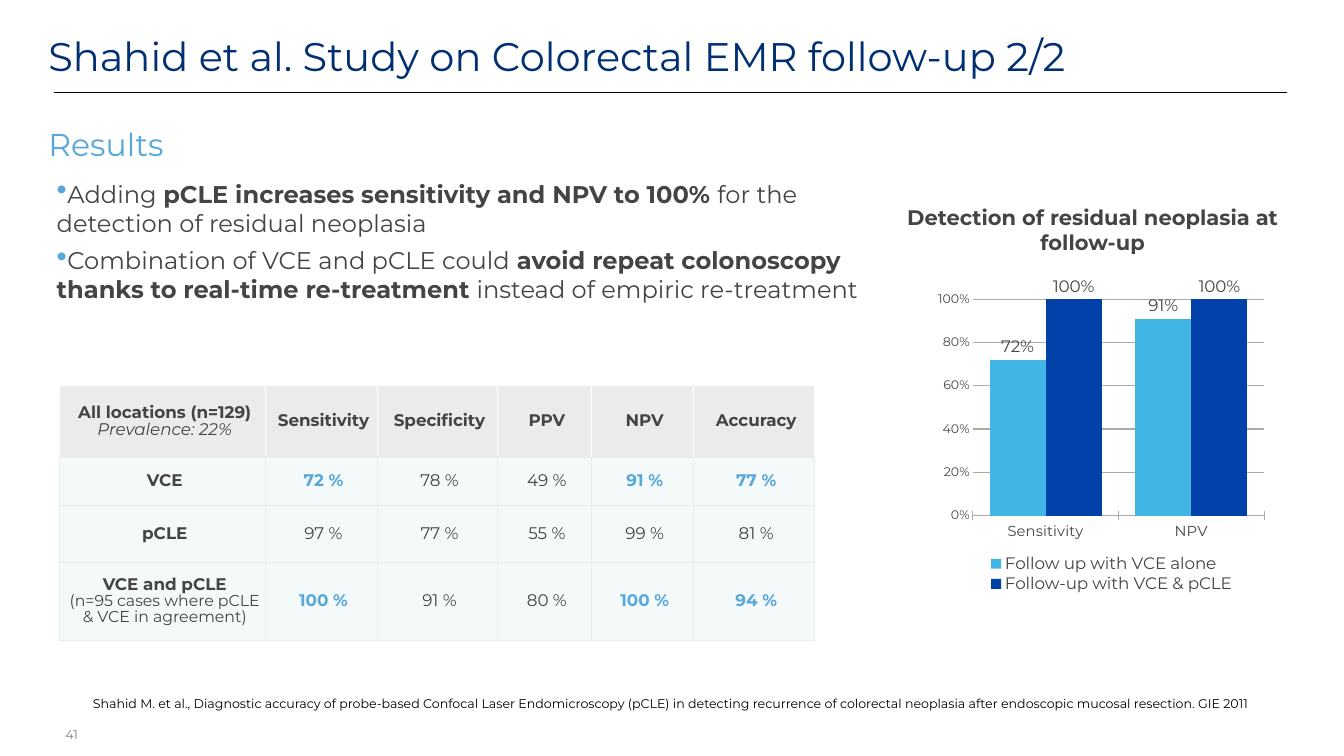
from dataclasses import dataclass
from typing import NamedTuple

from lxml import etree
from pptx import Presentation
from pptx import util as u
from pptx.chart import data as chart_data
from pptx.dml.color import RGBColor
from pptx.enum import chart as charts, shapes, text
from pptx.oxml import parse_xml
from pptx.oxml.ns import nsdecls, qn

FONT = "Montserrat"
COLORS = {
    "navy": "002F73", "sky": "58A7DA", "body": "444444", "number": "818181",
    "black": "000000", "white": "FFFFFF", "header": "EBEBEB", "row": "F4FAFA",
    "grid": "AAAAAA", "vce": "41B6E4", "both": "0042AA",
}
CENTER = text.PP_ALIGN.CENTER


class Run(NamedTuple):
    words: str
    size: float
    color: str = "body"
    bold: bool = False
    italic: bool = False


@dataclass
class TextBlock:
    box: tuple[float, float, float, float]
    paragraphs: list[list[Run]]
    align: text.PP_ALIGN = text.PP_ALIGN.LEFT
    wrap: bool = True
    bullets: bool = False


def rgb(name: str) -> RGBColor:
    return RGBColor.from_string(COLORS[name])


def style_font(font, size: float, color: str, bold: bool = False, italic: bool = False) -> None:
    font.name, font.size = FONT, u.Pt(size)
    font.bold, font.italic = bold, italic
    font.color.rgb = rgb(color)


def add_runs(paragraph, runs: list[Run]) -> None:
    for item in runs:
        run = paragraph.add_run()
        run.text = item.words
        style_font(run.font, *item[1:])


def set_insets(frame, inset: float) -> None:
    frame.margin_left = frame.margin_right = u.Inches(inset)
    frame.margin_top = frame.margin_bottom = u.Inches(inset)


def add_bullet(paragraph) -> None:
    props = paragraph._p.get_or_add_pPr()
    props.set("marL", str(u.Inches(0.03)))
    props.set("indent", "0")
    color = etree.SubElement(props, qn("a:buClr"))
    etree.SubElement(color, qn("a:srgbClr"), val=COLORS["sky"])
    etree.SubElement(props, qn("a:buSzPct"), val="125000")
    etree.SubElement(props, qn("a:buChar"), char="•")


def add_text(slide, block: TextBlock) -> None:
    frame = slide.shapes.add_textbox(*map(u.Inches, block.box)).text_frame
    frame.word_wrap = block.wrap
    set_insets(frame, 0.04)
    for index, runs in enumerate(block.paragraphs):
        paragraph = frame.add_paragraph() if index else frame.paragraphs[0]
        paragraph.alignment = block.align
        if block.bullets:
            add_bullet(paragraph)
        if index:
            paragraph.space_before = u.Pt(8)
        add_runs(paragraph, runs)


def add_title(slide, words: str) -> None:
    title = slide.shapes.title
    title.left, title.top = u.Inches(0.64), u.Inches(0.24)
    title.width, title.height = u.Inches(16.28), u.Inches(0.99)
    frame = title.text_frame
    frame.auto_size = text.MSO_AUTO_SIZE.NONE
    frame.vertical_anchor = text.MSO_ANCHOR.MIDDLE
    set_insets(frame, 0)
    frame.paragraphs[0].alignment = text.PP_ALIGN.LEFT
    add_runs(frame.paragraphs[0], [Run(words, 38, "navy")])


def add_rule(slide) -> None:
    rule = slide.shapes.add_connector(
        shapes.MSO_CONNECTOR.STRAIGHT, *map(u.Inches, (0.71, 1.22, 17.03, 1.22)))
    rule.line.color.rgb = rgb("black")
    rule.line.width = u.Pt(0.25)
    etree.SubElement(rule._element.spPr, qn("a:effectLst"))


# Results table
def set_borders(cell, is_header: bool) -> None:
    props = cell._tc.get_or_add_tcPr()
    for index, side in enumerate("LRTB"):
        color = COLORS["white" if is_header and side != "B" else "header"]
        props.insert(index, parse_xml(
            f'<a:ln{side} {nsdecls("a")} w="12700"><a:solidFill>'
            f'<a:srgbClr val="{color}"/></a:solidFill></a:ln{side}>'))


def fill_cell(cell, lines: list[list[Run]], is_header: bool) -> None:
    cell.fill.solid()
    cell.fill.fore_color.rgb = rgb("header" if is_header else "row")
    set_borders(cell, is_header)
    cell.vertical_anchor = text.MSO_ANCHOR.MIDDLE
    set_insets(cell, 0.04)
    for index, runs in enumerate(lines):
        paragraph = cell.text_frame.add_paragraph() if index else cell.text_frame.paragraphs[0]
        paragraph.alignment = CENTER
        paragraph.line_spacing = 0.83
        paragraph._p.get_or_add_pPr().set("marL", str(u.Inches(0.06)))
        add_runs(paragraph, runs)


def add_results_table(slide) -> None:
    widths = (2.72, 1.48, 1.59, 1.25, 1.34, 1.61)
    heights = (0.95, 0.64, 0.75, 1.03)
    measures = ("Sensitivity", "Specificity", "PPV", "NPV", "Accuracy")
    improved = ("Sensitivity", "NPV", "Accuracy")
    results = [
        ([[Run("VCE", 16, bold=True)]], (72, 78, 49, 91, 77), True),
        ([[Run("pCLE", 16, bold=True)]], (97, 77, 55, 99, 81), False),
        ([[Run("VCE and pCLE", 16, bold=True)],
          [Run("(n=95 cases where pCLE & VCE in agreement)", 15)]],
         (100, 91, 80, 100, 94), True),
    ]
    table = slide.shapes.add_table(
        len(heights), len(widths), *map(u.Inches, (0.79, 5.1, 10, 3.36))).table
    table.first_row = table.horz_banding = False
    for column, width in zip(table.columns, widths):
        column.width = u.Inches(width)
    for row, height in zip(table.rows, heights):
        row.height = u.Inches(height)

    fill_cell(table.cell(0, 0), [[Run("All locations (n=129)", 16, bold=True)],
                                 [Run("Prevalence: 22%", 16, italic=True)]], True)
    for column, measure in enumerate(measures, 1):
        fill_cell(table.cell(0, column), [[Run(measure, 16, bold=True)]], True)
    for row, (method, values, highlighted) in enumerate(results, 1):
        fill_cell(table.cell(row, 0), method, False)
        for column, (measure, value) in enumerate(zip(measures, values), 1):
            strong = highlighted and measure in improved
            figure = Run(f"{value} %", 16, "sky" if strong else "body", strong)
            fill_cell(table.cell(row, column), [[figure]], False)


# Detection chart
def place(parent, index: int, x: float, y: float, w: float, h: float, inner: bool = False) -> None:
    for old in parent.findall(qn("c:layout")):
        parent.remove(old)
    target = '<c:layoutTarget val="inner"/>' if inner else ""
    sizes = "".join(f'<c:{key} val="{value}"/>' for key, value in zip("xywh", (x, y, w, h)))
    parent.insert(index, parse_xml(
        f'<c:layout {nsdecls("c")}><c:manualLayout>{target}<c:xMode val="edge"/>'
        f'<c:yMode val="edge"/>{sizes}</c:manualLayout></c:layout>'))


def add_detection_chart(slide) -> None:
    rates = chart_data.CategoryChartData()
    rates.categories = ["Sensitivity", "NPV"]
    rates.add_series("Follow up with VCE alone", (0.72, 0.91))
    rates.add_series("Follow-up with VCE & pCLE", (1, 1))
    chart = slide.shapes.add_chart(
        charts.XL_CHART_TYPE.COLUMN_CLUSTERED,
        *map(u.Inches, (12.18, 3.66, 4.59, 4.2)), rates).chart
    chart.has_title = False
    style_font(chart.font, 10, "black")

    plot = chart.plots[0]
    plot.gap_width, plot.overlap, plot.vary_by_categories = 60, 0, False
    for series, color in zip(plot.series, ("vce", "both")):
        series.format.fill.solid()
        series.format.fill.fore_color.rgb = rgb(color)
        labels = series.data_labels
        labels.show_value = True
        labels.position = charts.XL_LABEL_POSITION.OUTSIDE_END
        labels.number_format, labels.number_format_is_linked = "0%", False
        style_font(labels.font, 16, "body")

    methods, scale = chart.category_axis, chart.value_axis
    methods.major_tick_mark = charts.XL_TICK_MARK.CROSS
    methods.tick_label_position = charts.XL_TICK_LABEL_POSITION.LOW
    style_font(methods.tick_labels.font, 14, "body")
    scale.minimum_scale, scale.maximum_scale, scale.major_unit = 0, 1, 0.2
    scale.major_tick_mark = charts.XL_TICK_MARK.INSIDE
    scale.tick_labels.number_format = "0%"
    scale.tick_labels.number_format_is_linked = False
    style_font(scale.tick_labels.font, 12, "body")
    scale.format.line.fill.background()
    for line in (methods.format.line, scale.major_gridlines.format.line):
        line.color.rgb, line.width = rgb("grid"), u.Pt(1)

    chart.has_legend = True
    chart.legend.position = charts.XL_LEGEND_POSITION.BOTTOM
    chart.legend.include_in_layout = True
    style_font(chart.legend.font, 16, "body")
    place(chart.legend._element, 1, 0.16, 0.87, 0.78, 0.13)
    place(chart._chartSpace.chart.plotArea, 0, 0.15, 0.06, 0.84, 0.69, inner=True)


def main() -> None:
    deck = Presentation()
    deck.slide_width, deck.slide_height = u.Inches(17.78), u.Inches(10)
    slide = deck.slides.add_slide(deck.slide_layouts[5])
    add_title(slide, "Shahid et al. Study on Colorectal EMR follow-up 2/2")
    add_rule(slide)
    add_detection_chart(slide)
    add_results_table(slide)

    # Headings, findings, page number and citation
    findings = [
        [Run("Adding ", 23), Run("pCLE increases sensitivity and NPV to 100%", 23, bold=True),
         Run(" for the detection of residual neoplasia", 23)],
        [Run("Combination of VCE and pCLE could ", 23),
         Run("avoid repeat colonoscopy thanks to real-time re-treatment", 23, bold=True),
         Run(" instead of empiric re-treatment", 23)],
    ]
    citation = ("Shahid M. et al., Diagnostic accuracy of probe-based Confocal Laser Endomicroscopy "
                "(pCLE) in detecting recurrence of colorectal neoplasia after endoscopic mucosal "
                "resection. GIE 2011")
    chart_heading = Run("Detection of residual neoplasia at follow-up", 20, bold=True)
    for block in (
        TextBlock((0.6, 1.62, 1.61, 0.5), [[Run("Results", 30, "sky")]], wrap=False),
        TextBlock((0.68, 2.33, 11.19, 1.69), findings, bullets=True),
        TextBlock((11.74, 2.66, 5.43, 0.68), [[chart_heading]], CENTER),
        TextBlock((0.79, 9.57, 0.28, 0.25), [[Run("41", 12, "number")]],
                  text.PP_ALIGN.RIGHT, wrap=False),
        TextBlock((0.33, 9.16, 17.1, 0.25), [[Run(citation, 12, "black")]], CENTER),
    ):
        add_text(slide, block)
    deck.save("out.pptx")


if __name__ == "__main__":
    main()
